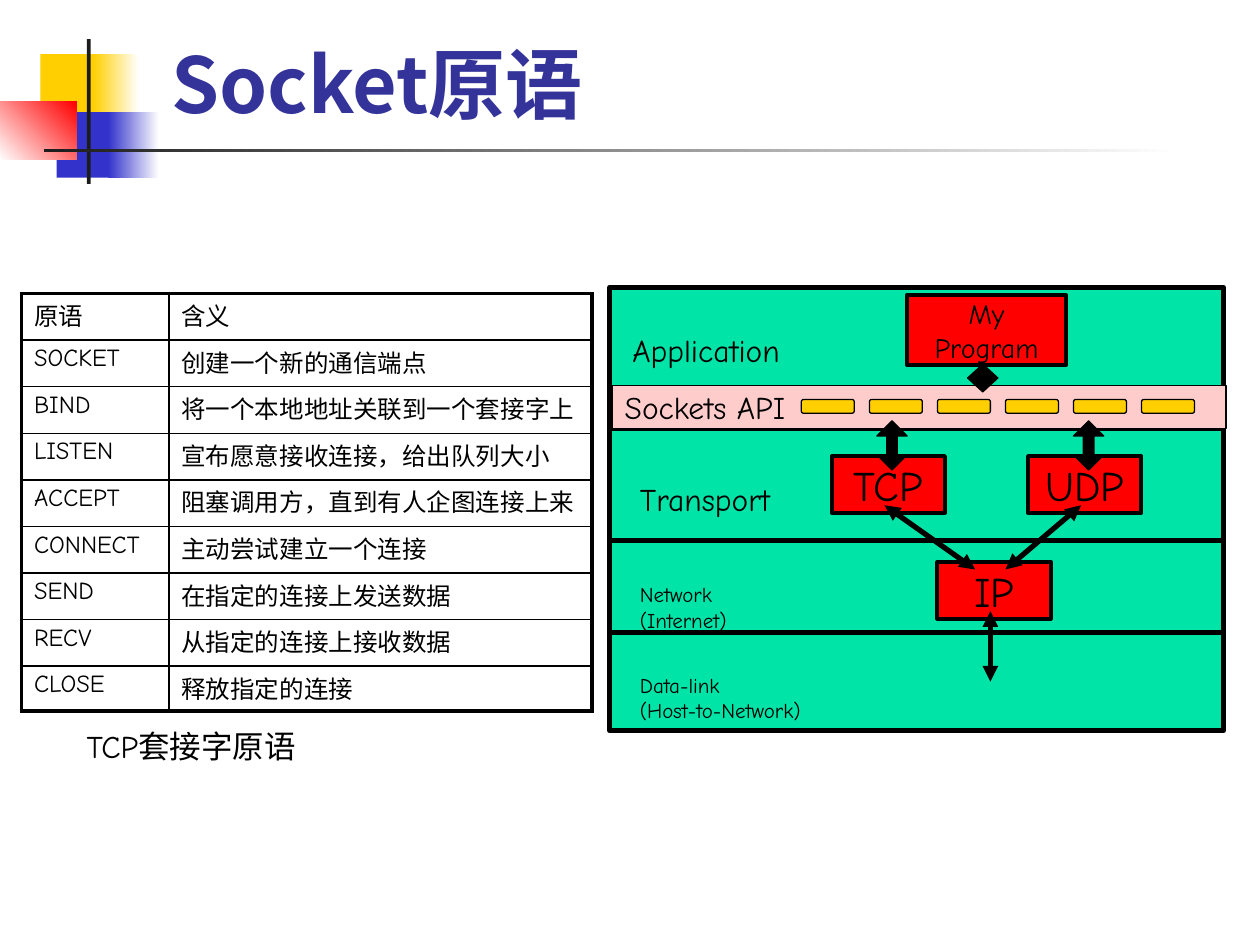
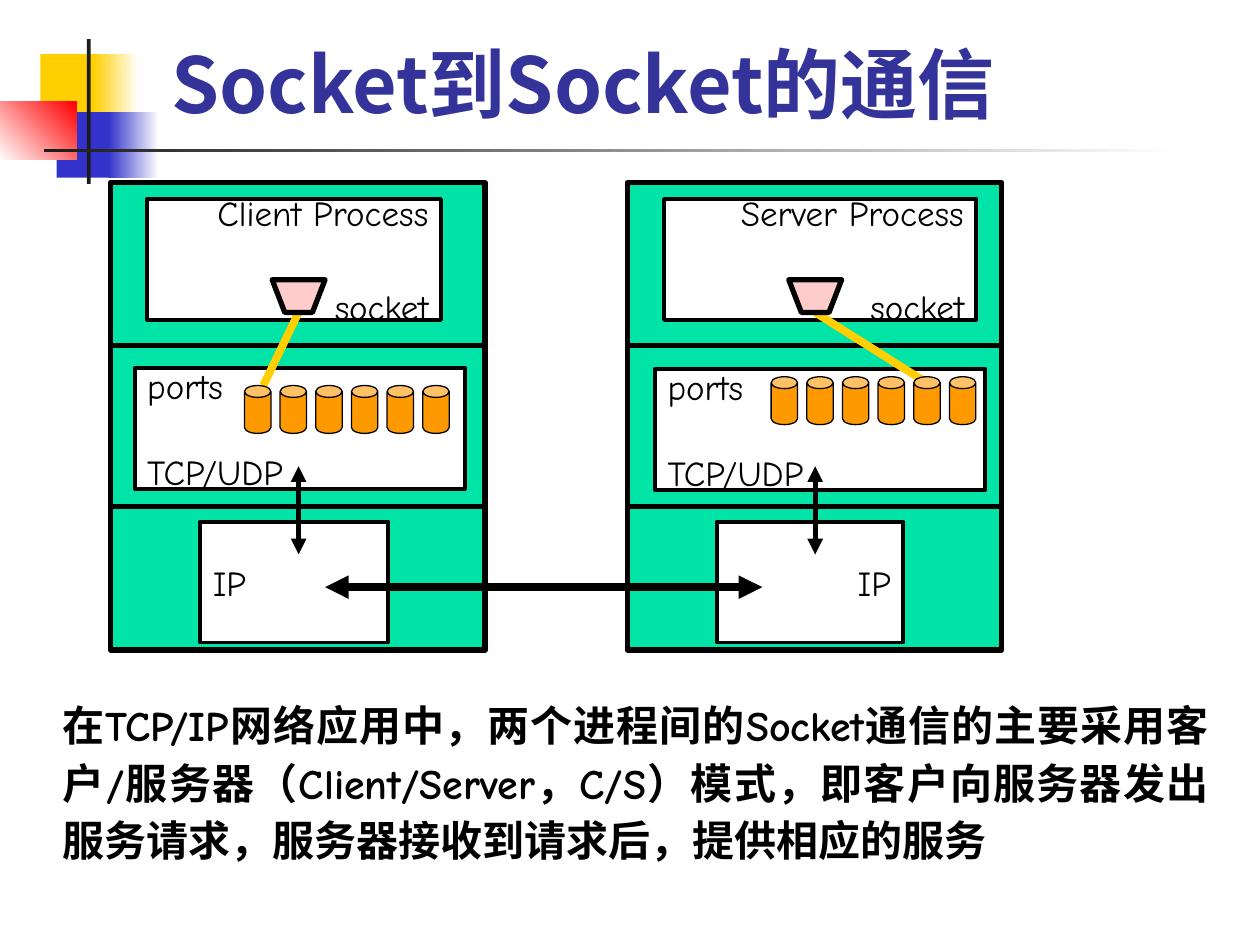
"""Build two slides on socket primitives and socket to socket communication."""
import pptx
import pptx.util
import pptx.dml.color
import pptx.enum.shapes
import pptx.enum.text
import pptx.oxml.ns
from lxml import etree

Inches = pptx.util.Inches
Pt = pptx.util.Pt
RGB = pptx.dml.color.RGBColor.from_string
KIND = pptx.enum.shapes.MSO_SHAPE
ALIGN = pptx.enum.text.PP_ALIGN
ANCHOR = pptx.enum.text.MSO_ANCHOR
qn = pptx.oxml.ns.qn

COLORS = {
    "black": "000000", "white": "FFFFFF", "ink": "1C1C1C", "title": "333399",
    "gold": "FFCF01", "blue": "3333CC", "red": "FF0000", "green": "00E4A8",
    "pink": "FFCCCC", "orange": "FF9900",
}
LATIN = "Comic Neue"
HAN = "Noto Sans CJK SC"


def put(host, text="", at=None, kind=KIND.RECTANGLE, fill=None, edge=None, adj=(),
        size=18, font=LATIN, color="black", bold=False, align=ALIGN.LEFT,
        anchor=ANCHOR.TOP, wrap=False, gap=0, lead=None):
    """Write formatted text in a cell or title, or in a new shape when at is given."""
    item = host
    if at:
        box = [Inches(n) for n in at]
        if kind is None:
            item = host.shapes.add_textbox(*box)
        else:
            item = host.shapes.add_shape(kind, *box)
            item.shadow.inherit = False
            if edge:
                item.line.color.rgb = RGB(COLORS["black"])
                item.line.width = Pt(edge)
            else:
                item.line.fill.background()
        for i, value in enumerate(adj):
            item.adjustments[i] = value
    if fill:
        item.fill.solid()
        item.fill.fore_color.rgb = RGB(COLORS[fill])
    if text:
        frame = item.text_frame
        frame.word_wrap = wrap
        frame.vertical_anchor = anchor
        for i, line in enumerate(text.split("\n")):
            para = frame.add_paragraph() if i else frame.paragraphs[0]
            para.alignment = align
            if lead:
                para.line_spacing = lead
            if i and gap:
                para.space_before = Pt(gap)
            run = para.add_run()
            run.text = line
            run.font.size = Pt(size)
            run.font.name = font
            run.font.bold = bold
            run.font.color.rgb = RGB(COLORS[color])
            etree.SubElement(run.font._element, qn("a:ea"), typeface=HAN)
    return item


def link(slide, x1, y1, x2, y2, color="black", width=3, heads=False):
    """Draw a straight line, with arrowheads at both ends if heads is set."""
    line = slide.shapes.add_connector(
        pptx.enum.shapes.MSO_CONNECTOR.STRAIGHT,
        Inches(x1), Inches(y1), Inches(x2), Inches(y2))
    line.line.color.rgb = RGB(COLORS[color])
    line.line.width = Pt(width)
    props = line.element.spPr
    if heads:
        for end in ("a:headEnd", "a:tailEnd"):
            etree.SubElement(props.find(qn("a:ln")), qn(end), type="triangle")
    etree.SubElement(props, qn("a:effectLst"))


deck = pptx.Presentation()
deck.slide_width = Inches(10)
deck.slide_height = Inches(7.5)

BANDS = [
    ((0.32, 0.43, 0.48, 0.52), "gold", None, 0),
    ((0.74, 0.43, 0.36, 0.52), "gold", "white", 0),
    ((0.45, 0.89, 0.46, 0.52), "blue", None, 0),
    ((0.86, 0.89, 0.4, 0.52), "blue", "white", 0),
    ((0, 0.81, 0.61, 0.46), "white", "red", 45),
    ((0.69, 0.31, 0.03, 1.15), "ink", None, 0),
    ((0.35, 1.18, 9, 0.03), "ink", "white", 0),
]
slides = []
for name in ("Socket原语", "Socket到Socket的通信"):
    slide = deck.slides.add_slide(deck.slide_layouts[5])
    for at, start, stop, angle in BANDS:
        band = put(slide, at=at, fill=start)
        if stop:
            band.fill.gradient()
            band.fill.gradient_angle = angle
            for mark, tone in zip(band.fill.gradient_stops, (start, stop)):
                mark.color.rgb = RGB(COLORS[tone])
    title = slide.shapes.title
    title.left, title.top = Inches(1.26), Inches(0.23)
    title.width, title.height = Inches(8.52), Inches(0.84)
    title.text_frame.auto_size = pptx.enum.text.MSO_AUTO_SIZE.NONE
    put(title, name, size=44, font=HAN, color="title", bold=True,
        anchor=ANCHOR.BOTTOM, wrap=True)
    slides.append(slide)
calls, hosts = slides

ROWS = [
    ("原语", "含义"),
    ("SOCKET", "创建一个新的通信端点"),
    ("BIND", "将一个本地地址关联到一个套接字上"),
    ("LISTEN", "宣布愿意接收连接，给出队列大小"),
    ("ACCEPT", "阻塞调用方，直到有人企图连接上来"),
    ("CONNECT", "主动尝试建立一个连接"),
    ("SEND", "在指定的连接上发送数据"),
    ("RECV", "从指定的连接上接收数据"),
    ("CLOSE", "释放指定的连接"),
]
last = len(ROWS) - 1
grid = calls.shapes.add_table(len(ROWS), 2, Inches(0.17), Inches(2.33),
                              Inches(4.53), Inches(3.28)).table
grid.first_row = grid.horz_banding = False
for col, width in zip(grid.columns, (1.17, 3.36)):
    col.width = Inches(width)
for r, words in enumerate(ROWS):
    grid.rows[r].height = Inches(0.32 if r == last else 0.37)
    for c, word in enumerate(words):
        cell = put(grid.cell(r, c), word, fill="white", size=14, lead=0.9, wrap=True)
        props = cell._tc.get_or_add_tcPr()
        outer = {"L": c == 0, "R": c == 1, "T": r == 0, "B": r == last}
        for i, (side, thick) in enumerate(outer.items()):
            rule = etree.Element(qn("a:ln" + side), w=str(Pt(2.25 if thick else 1)))
            tint = etree.SubElement(rule, qn("a:solidFill"))
            etree.SubElement(tint, qn("a:srgbClr"), val=COLORS["black"])
            props.insert(i, rule)
put(calls, "TCP套接字原语", at=(0.59, 5.72, 1.97, 0.4), kind=None, wrap=True)

put(calls, at=(4.84, 2.28, 4.87, 3.52), fill="green", edge=3)
for y in (3.4, 4.29, 5.02):
    link(calls, 4.86, y, 9.73, y)
for text, at, size in [
    ("Application", (4.92, 2.58, 1.51, 0.4), 18),
    ("Transport", (4.98, 3.76, 1.39, 0.4), 18),
    ("Network\n(Internet)", (4.98, 4.57, 1.02, 0.5), 12),
    ("Data-link\n(Host-to-Network)", (4.98, 5.29, 1.69, 0.5), 12),
]:
    put(calls, text, at=at, kind=None, size=size)
put(calls, "Sockets API", at=(4.86, 3.06, 4.87, 0.34), fill="pink", edge=0.75,
    anchor=ANCHOR.MIDDLE)
for text, at, size in [
    ("TCP", (6.6, 3.62, 0.9, 0.45), 24),
    ("UDP", (8.16, 3.62, 0.9, 0.45), 24),
    ("My\nProgram", (7.2, 2.34, 1.26, 0.56), 16),
    ("IP", (7.44, 4.46, 0.9, 0.45), 24),
]:
    put(calls, text, at=at, fill="red", edge=2.25, size=size,
        align=ALIGN.CENTER, anchor=ANCHOR.MIDDLE)
for ends in [(7.02, 4.01, 7.74, 4.52), (8.58, 4.01, 7.98, 4.52),
             (7.86, 4.85, 7.86, 5.41)]:
    link(calls, *ends, heads=True)
for i in range(6):
    put(calls, at=(6.36 + 0.54 * i, 3.17, 0.42, 0.11), fill="gold", edge=0.75,
        kind=KIND.FLOWCHART_ALTERNATE_PROCESS)
for x, y, high, tip in [(6.96, 3.34, 0.39, 0.35), (7.68, 2.89, 0.22, 0.2),
                        (8.52, 3.34, 0.39, 0.35)]:
    put(calls, at=(x, y, 0.24, high), kind=KIND.UP_DOWN_ARROW, fill="black",
        edge=0.75, adj=(0.5, tip))

HOSTS = [
    (0.88, "Client", 2.33, (1.07, 2.92), 1.49, ALIGN.LEFT, (1.94, 3.06), 2.09),
    (4.98, "Server", 2.48, (5.2, 2.93), 1.48, ALIGN.RIGHT, (6.12, 2.99), 7.39),
]
for left, role, wide, ports, span, side, cans, goal in HOSTS:
    mid = left + 1.49
    put(hosts, at=(left, 1.45, 2.97, 3.71), fill="green", edge=3)
    for y in (2.74, 4.02):
        link(hosts, left, y, left + 2.97, y)
    for text, at, align, gap in [
        (role + " Process\nsocket", (left + 0.29, 1.58, wide, 0.96), ALIGN.RIGHT, 30),
        ("ports\nTCP/UDP", (*ports, 2.62, 0.96), ALIGN.LEFT, 25),
        ("IP", (left + 0.71, 4.14, span, 0.96), side, 0),
    ]:
        put(hosts, text, at=at, fill="white", edge=2.25, size=20, align=align,
            anchor=ANCHOR.MIDDLE, gap=gap)
    link(hosts, mid, 2.48, goal, 3.06, color="gold", width=4.5)
    link(hosts, mid, 3.7, mid, 4.4, heads=True)
    for i in range(6):
        put(hosts, at=(cans[0] + 0.283 * i, cans[1], 0.21, 0.38), kind=KIND.CAN,
            fill="orange", edge=0.75, adj=(0.45,))
    pen = hosts.shapes.build_freeform(Inches(mid - 0.21), Inches(2.22))
    pen.add_line_segments([(Inches(mid + dx), Inches(y)) for dx, y in
                           [(-0.11, 2.48), (0.11, 2.48), (0.21, 2.22)]], close=True)
    plug = pen.convert_to_shape()
    plug.shadow.inherit = False
    plug.fill.solid()
    plug.fill.fore_color.rgb = RGB(COLORS["pink"])
    plug.line.color.rgb = RGB(COLORS["black"])
    plug.line.width = Pt(3)
link(hosts, 2.58, 4.66, 6.05, 4.66, width=4.5, heads=True)
put(hosts, "在TCP/IP网络应用中，两个进程间的Socket通信的主要采用客户/服务器"
    "（Client/Server，C/S）模式，即客户向服务器发出服务请求，服务器接收到请求后，提供相应的服务",
    at=(0.4, 5.45, 9.29, 1.45), kind=None, size=24, bold=True,
    align=ALIGN.JUSTIFY, lead=1.14, wrap=True)

deck.save("out.pptx")
